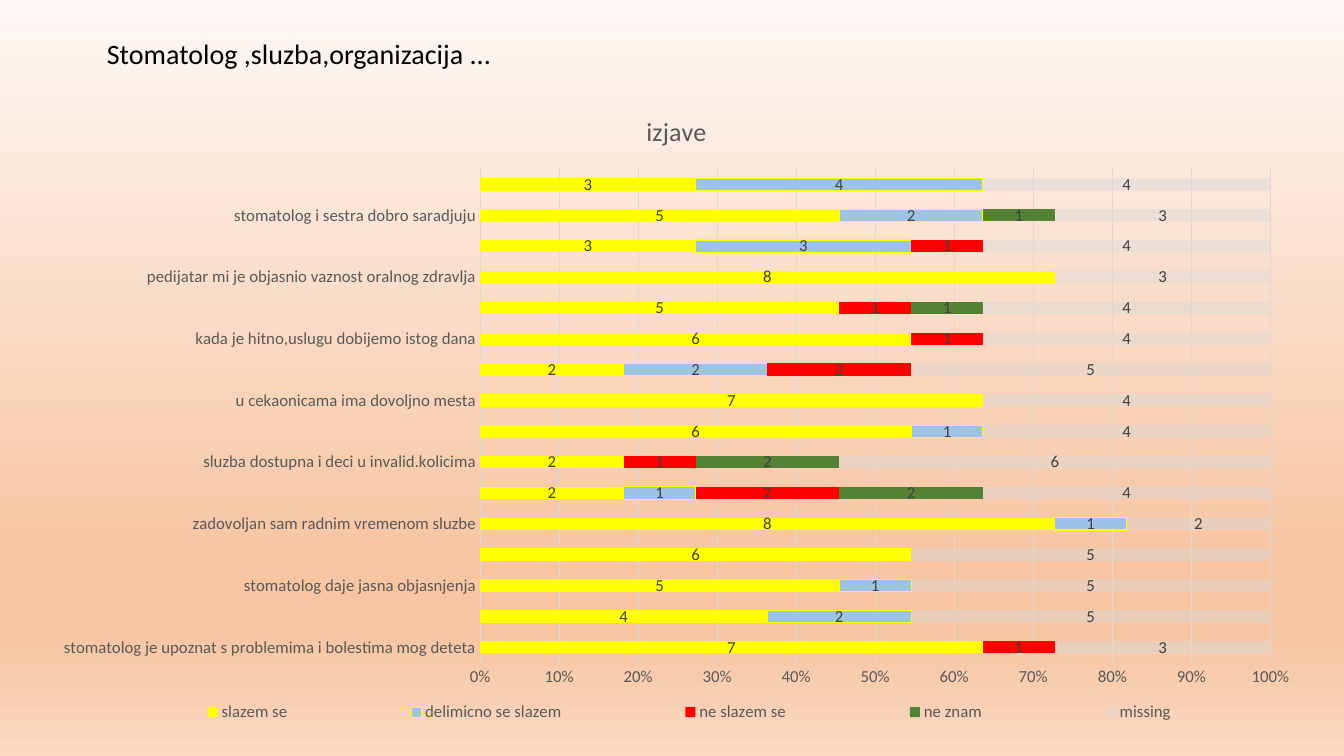
from dataclasses import dataclass
from typing import Optional

import pptx
import pptx.chart.data
import pptx.dml.color
import pptx.enum.chart
import pptx.enum.text
import pptx.oxml
import pptx.oxml.ns
import pptx.util
from pptx.dml.color import RGBColor
from pptx.util import Inches

FONT = "Calibri"
BLACK = RGBColor(0x00, 0x00, 0x00)
LABEL_GRAY = RGBColor(0x40, 0x40, 0x40)
TEXT_GRAY = RGBColor(0x59, 0x59, 0x59)
LIGHT_GRAY = RGBColor(0xD9, 0xD9, 0xD9)
YELLOW = RGBColor(0xFF, 0xFF, 0x00)
BLUE = RGBColor(0x9D, 0xC3, 0xE6)
RED = RGBColor(0xFF, 0x00, 0x00)
GREEN = RGBColor(0x54, 0x82, 0x35)
BACKGROUND_STOPS = [
    (0, RGBColor(0xFE, 0xF8, 0xF5)),
    (74, RGBColor(0xF7, 0xC5, 0xA2)),
    (83, RGBColor(0xF7, 0xC5, 0xA2)),
    (100, RGBColor(0xFA, 0xD8, 0xC1)),
]
# Fractions of the chart area
LEGEND_LAYOUT = {"x": 0.04, "y": 0.94, "w": 0.94, "h": 0.05}


@dataclass
class Answer:
    name: str
    values: list[Optional[int]]
    color: RGBColor
    outline: Optional[RGBColor] = None
    opacity: int = 100


# Every second bar is labelled, from the bottom up
STATEMENTS = [
    "stomatolog je upoznat s problemima i bolestima mog deteta",
    "stomatolog daje jasna objasnjenja",
    "zadovoljan sam radnim vremenom sluzbe",
    "sluzba dostupna i deci u invalid.kolicima",
    "u cekaonicama ima dovoljno mesta",
    "kada je hitno,uslugu dobijemo istog dana",
    "pedijatar mi je objasnio vaznost oralnog zdravlja",
    "stomatolog i sestra dobro saradjuju",
]
ANSWERS = [
    Answer("slazem se", [7, 4, 5, 6, 8, 2, 2, 6, 7, 2, 6, 5, 8, 3, 5, 3], YELLOW),
    Answer("delimicno se slazem",
           [None, 2, 1, None, 1, 1, None, 1, None, 2, None, None, None, 3, 2, 4],
           BLUE, outline=YELLOW),
    Answer("ne slazem se",
           [1, None, None, None, None, 2, 1, None, None, 2, 1, 1, None, 1, None, None],
           RED),
    Answer("ne znam",
           [None, None, None, None, None, 2, 2, None, None, None, None, 1, None, None, 1, None],
           GREEN),
    Answer("missing", [3, 5, 5, 5, 2, 4, 6, 4, 4, 5, 4, 4, 3, 4, 3, 4], LIGHT_GRAY, opacity=43),
]


def set_font(font: pptx.text.text.Font, size: float, color: RGBColor) -> None:
    font.name = FONT
    font.size = pptx.util.Pt(size)
    font.bold = False
    font.color.rgb = color


def set_line(line: pptx.dml.line.LineFormat, color: RGBColor) -> None:
    line.color.rgb = color
    line.width = pptx.util.Pt(0.75)


def paint_background(slide: pptx.slide.Slide) -> None:
    fill = slide.background.fill
    fill.gradient()
    fill.gradient_angle = 270
    stop_list = slide.element.find(".//" + pptx.oxml.ns.qn("a:gsLst"))
    for stop in list(stop_list):
        stop_list.remove(stop)
    for percent, color in BACKGROUND_STOPS:
        stop_list.append(pptx.oxml.parse_xml(
            f'<a:gs {pptx.oxml.ns.nsdecls("a")} pos="{percent * 1000}">'
            f'<a:srgbClr val="{color}"/></a:gs>'))


def add_title(slide: pptx.slide.Slide) -> None:
    title = slide.shapes.title
    title.left, title.top = Inches(0.96), Inches(0.21)
    title.width, title.height = Inches(11.5), Inches(0.68)
    title.text_frame.vertical_anchor = pptx.enum.text.MSO_ANCHOR.MIDDLE
    paragraph = title.text_frame.paragraphs[0]
    paragraph.text = "Stomatolog ,sluzba,organizacija ..."
    paragraph.alignment = pptx.enum.text.PP_ALIGN.LEFT
    paragraph.line_spacing = 0.9
    set_font(paragraph.font, 20, BLACK)


def format_series(series: pptx.chart.series.BarSeries, answer: Answer) -> None:
    series.invert_if_negative = False
    fill = series.format.fill
    fill.solid()
    fill.fore_color.rgb = answer.color
    if answer.opacity < 100:
        color_element = series._element.find(".//" + pptx.oxml.ns.qn("a:srgbClr"))
        color_element.append(pptx.oxml.parse_xml(
            f'<a:alpha {pptx.oxml.ns.nsdecls("a")} val="{answer.opacity * 1000}"/>'))
    if answer.outline is None:
        series.format.line.fill.background()
    else:
        set_line(series.format.line, answer.outline)
    labels = series.data_labels
    labels.show_value = True
    labels.position = pptx.enum.chart.XL_LABEL_POSITION.CENTER
    set_font(labels.font, 12, LABEL_GRAY)


def add_legend(chart: pptx.chart.chart.Chart) -> None:
    """Spread the legend entries over the width of the chart."""
    chart.has_legend = True
    chart.legend.position = pptx.enum.chart.XL_LEGEND_POSITION.BOTTOM
    chart.legend.include_in_layout = False
    set_font(chart.legend.font, 12, TEXT_GRAY)
    legend = chart.element.find(".//" + pptx.oxml.ns.qn("c:legend"))
    for layout in legend.findall(pptx.oxml.ns.qn("c:layout")):
        legend.remove(layout)
    sizes = "".join(f'<c:{key} val="{value}"/>' for key, value in LEGEND_LAYOUT.items())
    legend.find(pptx.oxml.ns.qn("c:legendPos")).addnext(pptx.oxml.parse_xml(
        f'<c:layout {pptx.oxml.ns.nsdecls("c")}><c:manualLayout>'
        f'<c:xMode val="edge"/><c:yMode val="edge"/>{sizes}'
        f'</c:manualLayout></c:layout>'))


def add_statement_chart(slide: pptx.slide.Slide) -> None:
    data = pptx.chart.data.CategoryChartData()
    data.categories = [label for statement in STATEMENTS for label in (statement, "")]
    for answer in ANSWERS:
        data.add_series(answer.name, answer.values)
    chart = slide.shapes.add_chart(
        pptx.enum.chart.XL_CHART_TYPE.BAR_STACKED_100,
        Inches(0.38), Inches(0.89), Inches(12.66), Inches(6.4), data).chart
    set_font(chart.font, 10, BLACK)

    chart.has_title = True
    heading = chart.chart_title.text_frame.paragraphs[0]
    heading.text = "izjave"
    set_font(heading.font, 18.6, TEXT_GRAY)
    chart.chart_title.include_in_layout = False
    add_legend(chart)

    for axis in (chart.category_axis, chart.value_axis):
        axis.major_tick_mark = pptx.enum.chart.XL_TICK_MARK.NONE
        axis.minor_tick_mark = pptx.enum.chart.XL_TICK_MARK.NONE
        set_font(axis.tick_labels.font, 12, TEXT_GRAY)
    set_line(chart.category_axis.format.line, LIGHT_GRAY)
    chart.value_axis.format.line.fill.background()
    chart.value_axis.has_major_gridlines = True
    set_line(chart.value_axis.major_gridlines.format.line, LIGHT_GRAY)
    chart.value_axis.tick_labels.number_format = "0%"
    chart.value_axis.tick_labels.number_format_is_linked = False

    plot = chart.plots[0]
    plot.vary_by_categories = False
    plot.gap_width = 150
    plot.overlap = 100
    for series, answer in zip(plot.series, ANSWERS):
        format_series(series, answer)


def main() -> None:
    presentation = pptx.Presentation()
    presentation.slide_width = Inches(13.33)
    presentation.slide_height = Inches(7.5)
    slide = presentation.slides.add_slide(presentation.slide_layouts.get_by_name("Title Only"))
    paint_background(slide)
    add_title(slide)
    add_statement_chart(slide)
    presentation.save("out.pptx")


if __name__ == "__main__":
    main()
